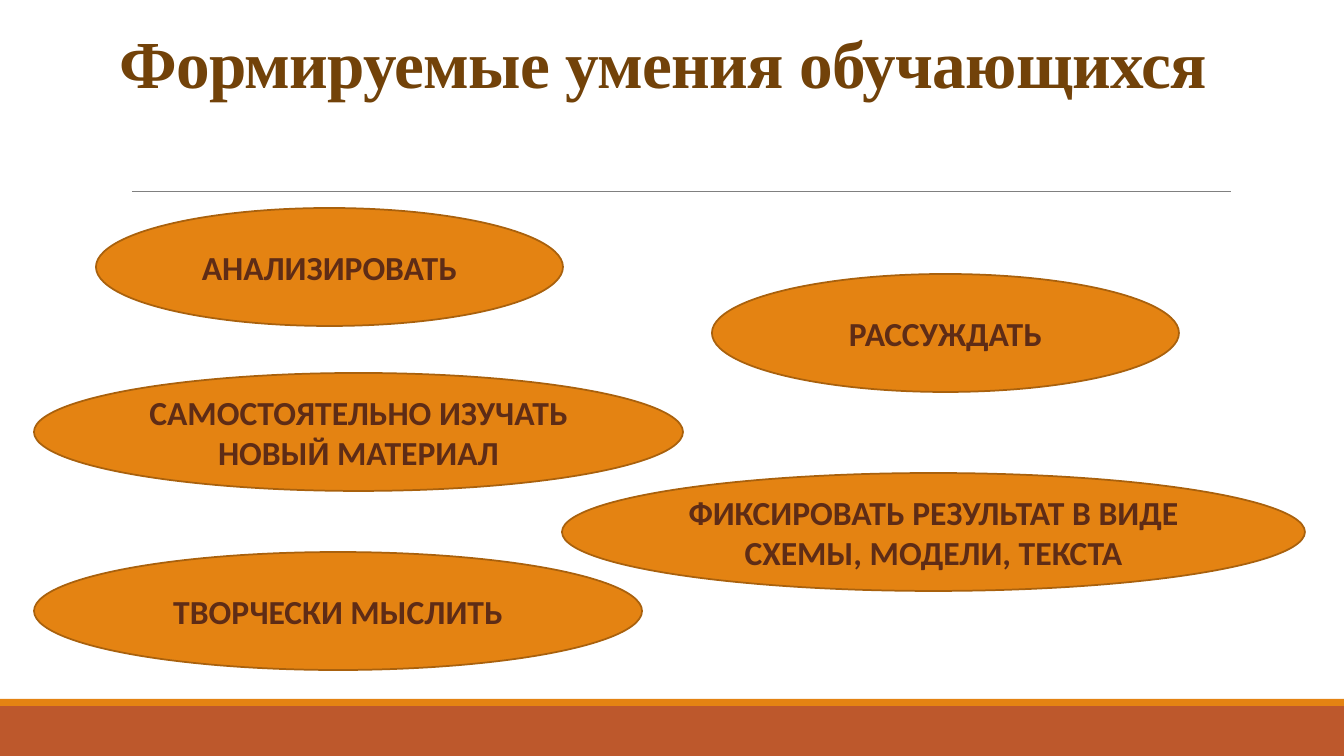
import pptx
import pptx.dml.color
import pptx.enum.shapes
import pptx.enum.text
import pptx.oxml.ns
import pptx.util
from lxml import etree

PIXELS_PER_INCH = 100.8
SLIDE_WIDTH, SLIDE_HEIGHT = 1344, 756
OVAL_HEIGHT = 118
TITLE_ONLY_LAYOUT = 5

COLOURS = {
    "rust": "BD582C",
    "orange": "E48312",
    "orange_edge": "A9610D",
    "rule": "808080",
    "title": "724209",
    "label": "5E2C16",
}

# left, top, width, label
SKILLS = [
    (96, 208, 467, "АНАЛИЗИРОВАТЬ"),
    (712, 274, 467, "РАССУЖДАТЬ"),
    (34, 373, 649, "САМОСТОЯТЕЛЬНО ИЗУЧАТЬ НОВЫЙ МАТЕРИАЛ"),
    (562, 473, 743, "ФИКСИРОВАТЬ РЕЗУЛЬТАТ В ВИДЕ СХЕМЫ, МОДЕЛИ, ТЕКСТА"),
    (34, 552, 608, "ТВОРЧЕСКИ МЫСЛИТЬ"),
]


def px(length):
    return pptx.util.Emu(round(length * 914400 / PIXELS_PER_INCH))


def colour(name):
    return pptx.dml.color.RGBColor.from_string(COLOURS[name])


class SlideBuilder:
    """Holds the current slide and draws its elements in one style."""

    def __init__(self, slide):
        self.slide = slide

    def set_label(self, shape, text, font_name, size, colour_name, anchor):
        """Fill a shape with one centred bold paragraph and return it."""
        frame = shape.text_frame
        frame.text = text
        frame.word_wrap = True
        frame.auto_size = pptx.enum.text.MSO_AUTO_SIZE.NONE
        frame.vertical_anchor = anchor
        paragraph = frame.paragraphs[0]
        paragraph.alignment = pptx.enum.text.PP_ALIGN.CENTER
        paragraph.font.name = font_name
        paragraph.font.size = pptx.util.Pt(size)
        paragraph.font.bold = True
        paragraph.font.color.rgb = colour(colour_name)
        return paragraph

    def title(self, left, top, width, height, text):
        title = self.slide.shapes.title
        title.left, title.top = px(left), px(top)
        title.width, title.height = px(width), px(height)
        paragraph = self.set_label(title, text, "Times New Roman", 48, "title",
                                   pptx.enum.text.MSO_ANCHOR.BOTTOM)
        paragraph.line_spacing = 0.85
        paragraph.runs[0]._r.get_or_add_rPr().set("spc", "-50")

    def shape(self, kind, left, top, width, height, fill):
        shape = self.slide.shapes.add_shape(
            kind, px(left), px(top), px(width), px(height))
        shape.shadow.inherit = False
        shape.fill.solid()
        shape.fill.fore_color.rgb = colour(fill)
        return shape

    def bar(self, top, height, fill):
        bar = self.shape(pptx.enum.shapes.MSO_SHAPE.RECTANGLE,
                         0, top, SLIDE_WIDTH, height, fill)
        bar.line.fill.background()

    def rule(self, left, right, y):
        rule = self.slide.shapes.add_connector(
            pptx.enum.shapes.MSO_CONNECTOR.STRAIGHT,
            px(left), px(y), px(right), px(y))
        rule.line.color.rgb = colour("rule")
        rule.line.width = pptx.util.Pt(0.5)
        etree.SubElement(rule._element.spPr, pptx.oxml.ns.qn("a:effectLst"))

    def skill(self, left, top, width, label):
        oval = self.shape(pptx.enum.shapes.MSO_SHAPE.OVAL,
                          left, top, width, OVAL_HEIGHT, "orange")
        oval.line.color.rgb = colour("orange_edge")
        oval.line.width = pptx.util.Pt(1.25)
        self.set_label(oval, label, "Calibri", 24, "label",
                       pptx.enum.text.MSO_ANCHOR.MIDDLE)


def main():
    presentation = pptx.Presentation()
    presentation.slide_width = px(SLIDE_WIDTH)
    presentation.slide_height = px(SLIDE_HEIGHT)
    layout = presentation.slide_layouts[TITLE_ONLY_LAYOUT]
    builder = SlideBuilder(presentation.slides.add_slide(layout))

    builder.bar(706, 50, "rust")
    builder.bar(699, 7, "orange")
    builder.rule(132, 1231, 191)
    builder.title(13, -53, 1300, 160, "Формируемые умения обучающихся")
    for skill in SKILLS:
        builder.skill(*skill)

    presentation.save("out.pptx")


if __name__ == "__main__":
    main()
